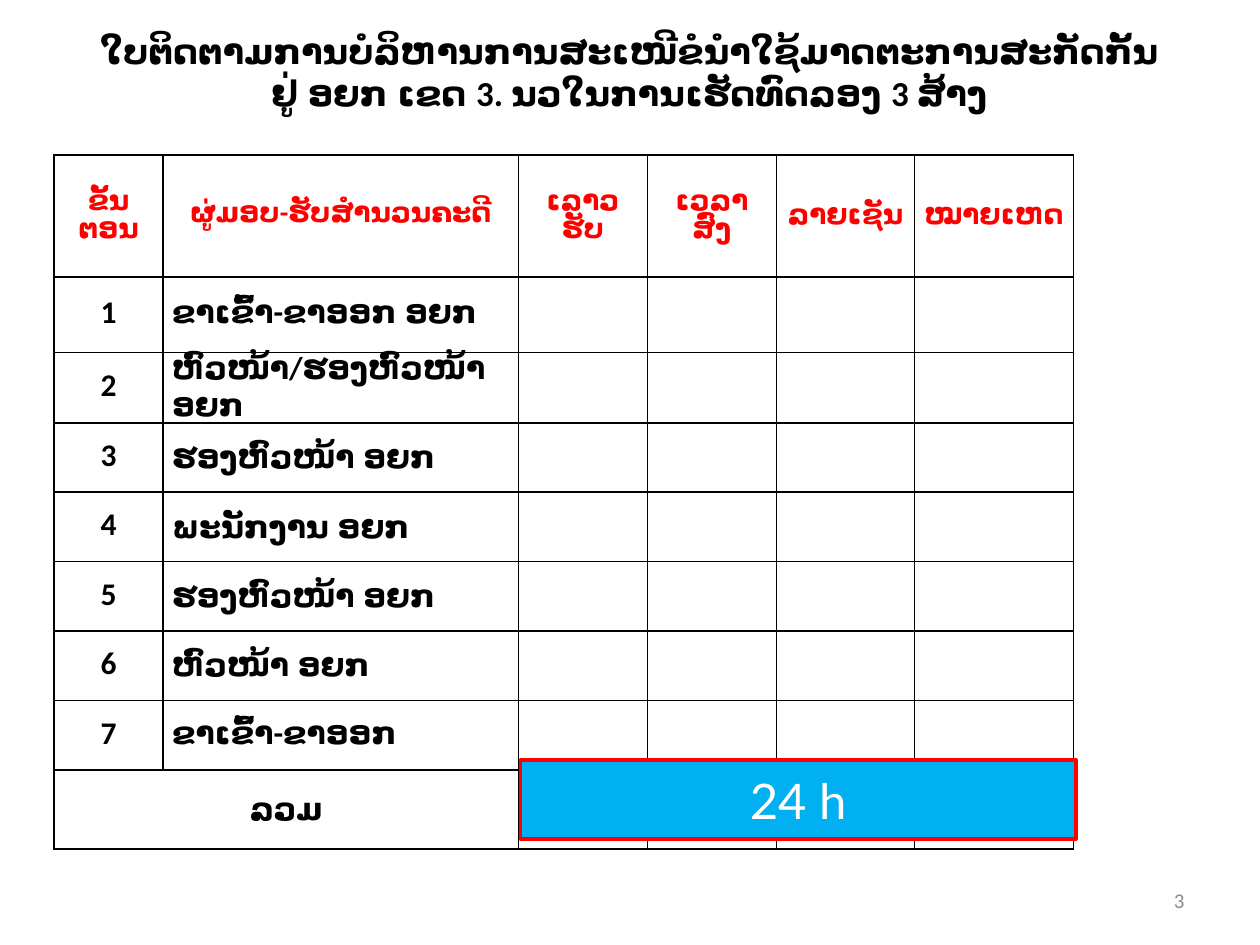
from lxml.etree import SubElement
from pptx import Presentation
from pptx.dml.color import RGBColor
from pptx.enum.shapes import MSO_SHAPE as Shape
from pptx.enum.text import MSO_ANCHOR as Anchor, PP_ALIGN as Align
from pptx.oxml.ns import qn
from pptx.util import Cm, Pt

BLACK = RGBColor(0x00, 0x00, 0x00)
WHITE = RGBColor(0xFF, 0xFF, 0xFF)
RED = RGBColor(0xFF, 0x00, 0x00)
BLUE = RGBColor(0x00, 0xB0, 0xF0)
GREY = RGBColor(0x8C, 0x8C, 0x8C)

TITLE = ["ໃບຕິດຕາມການບໍລິຫານການສະເໜີຂໍນໍາໃຊ້ມາດຕະການສະກັດກັ້ນ",
         "ຢູ່ ອຍກ ເຂດ 3. ນວໃນການເຮັດທົດລອງ 3 ສ້າງ"]
HEADERS = [["ຂັ້ນ", "ຕອນ"], ["ຜູ່ມອບ-ຮັບສໍານວນຄະດີ"], ["ເລາວຮັບ"],
           ["ເວລາສົ່ງ"], ["ລາຍເຊັນ"], ["ໝາຍເຫດ"]]
STEPS = ["ຂາເຂົ້າ-ຂາອອກ ອຍກ", "ຫົວໜ້າ/ຮອງຫົວໜ້າ ອຍກ", "ຮອງຫົວໜ້າ ອຍກ",
         "ພະນັກງານ ອຍກ", "ຮອງຫົວໜ້າ ອຍກ", "ຫົວໜ້າ ອຍກ", "ຂາເຂົ້າ-ຂາອອກ"]
TOTAL = "ລວມ"
COLUMN_WIDTHS = [2.2, 7.16, 2.6, 2.6, 2.79, 3.2]
ROW_HEIGHTS = [2.46, 1.53, 1.19] + [1.4] * 5 + [1.6]


def write(frame, lines, size, color, align=Align.CENTER, bold=True,
          font="Calibri", spacing=None):
    """Fill a text frame with one paragraph per line."""
    frame.word_wrap = True
    frame.vertical_anchor = Anchor.MIDDLE
    for index, line in enumerate(lines):
        paragraph = frame.paragraphs[0] if index == 0 else frame.add_paragraph()
        paragraph.alignment = align
        if spacing:
            paragraph.line_spacing = Pt(spacing)
        run = paragraph.add_run()
        run.text = line
        run.font.name = font
        run.font.size = Pt(size)
        run.font.bold = bold
        run.font.color.rgb = color


def add_line(parent, tag, width, color):
    """Append a solid line element, for a cell border or a text outline."""
    line = SubElement(parent, qn(tag), w=str(Pt(width)))
    fill = SubElement(line, qn("a:solidFill"))
    SubElement(fill, qn("a:srgbClr"), val=str(color))
    return line


def outline_text(frame, width, color):
    for paragraph in frame.paragraphs:
        for run in paragraph.runs:
            properties = run.font._element
            properties.insert(0, add_line(properties, "a:ln", width, color))


def format_cell(cell):
    cell.margin_left = cell.margin_right = Cm(0.18)
    cell.margin_top = cell.margin_bottom = 0
    cell.vertical_anchor = Anchor.MIDDLE
    properties = cell._tc.get_or_add_tcPr()
    for side in ("a:lnL", "a:lnR", "a:lnT", "a:lnB"):
        add_line(properties, side, 1, BLACK)
    cell.fill.background()


def add_title(slide):
    title = slide.shapes.title
    title.left, title.top = Cm(1.09), Cm(0.38)
    title.width, title.height = Cm(23.19), Cm(2.13)
    write(title.text_frame, TITLE, 20, BLACK)
    for paragraph in title.text_frame.paragraphs:
        paragraph.space_before = 0


def add_tracking_table(slide):
    frame = slide.shapes.add_table(
        len(ROW_HEIGHTS), len(COLUMN_WIDTHS), Cm(1.09), Cm(3.12),
        Cm(sum(COLUMN_WIDTHS)), Cm(sum(ROW_HEIGHTS)))
    table = frame.table
    table.first_row = table.horz_banding = False
    for column, width in zip(table.columns, COLUMN_WIDTHS):
        column.width = Cm(width)
    for row, height in zip(table.rows, ROW_HEIGHTS):
        row.height = Cm(height)
    for cell in table.iter_cells():
        format_cell(cell)

    # Header row
    for column, lines in enumerate(HEADERS):
        header = table.cell(0, column).text_frame
        write(header, lines, 16, RED, spacing=16)
        outline_text(header, 0.75, RED)

    # Numbered steps
    for number, step in enumerate(STEPS, 1):
        write(table.cell(number, 0).text_frame, [str(number)], 18, BLACK,
              spacing=20)
        write(table.cell(number, 1).text_frame, [step], 18, BLACK,
              Align.LEFT, spacing=20)

    # Total row
    last = len(ROW_HEIGHTS) - 1
    total = table.cell(last, 0)
    total.merge(table.cell(last, 1))
    write(total.text_frame, [TOTAL], 18, BLACK, spacing=20)


def add_duration_box(slide):
    box = slide.shapes.add_shape(Shape.RECTANGLE, Cm(10.49), Cm(15.32),
                                 Cm(11.2), Cm(1.6))
    box.shadow.inherit = False
    box.fill.solid()
    box.fill.fore_color.rgb = BLUE
    box.line.color.rgb = RED
    box.line.width = Pt(2)
    write(box.text_frame, ["24 h"], 28, WHITE, bold=False, font="Lato")


def add_page_number(slide):
    box = slide.shapes.add_textbox(Cm(18.2), Cm(17.65), Cm(5.93), Cm(1.01))
    write(box.text_frame, ["3"], 12, GREY, Align.RIGHT, bold=False)


def main():
    presentation = Presentation()
    presentation.slide_width, presentation.slide_height = Cm(25.4), Cm(19.05)
    slide = presentation.slides.add_slide(presentation.slide_layouts[5])
    add_title(slide)
    add_tracking_table(slide)
    add_duration_box(slide)
    add_page_number(slide)
    presentation.save("out.pptx")


if __name__ == "__main__":
    main()
